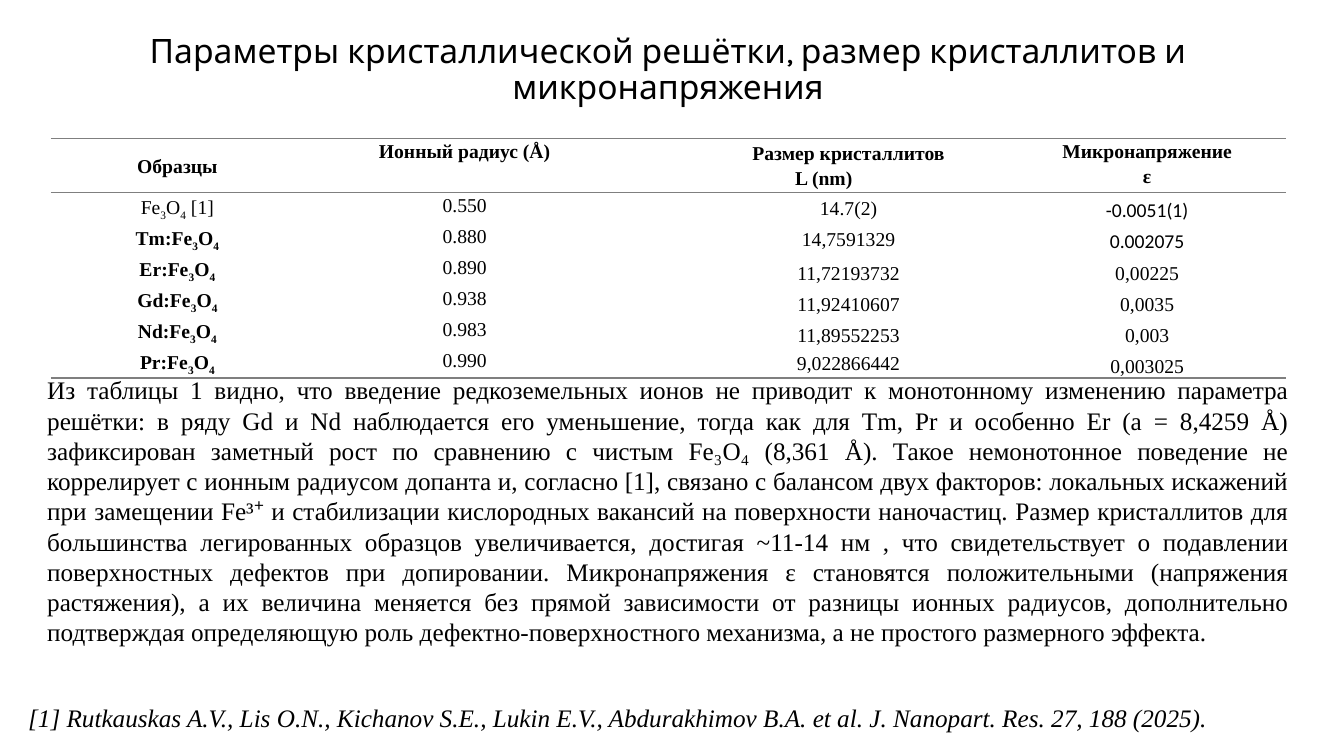
import pptx
import pptx.dml.color
import pptx.enum.text
import pptx.oxml
import pptx.oxml.ns
import pptx.util

Cm, Pt = pptx.util.Cm, pptx.util.Pt
ALIGN = pptx.enum.text.PP_ALIGN
ANCHOR = pptx.enum.text.MSO_ANCHOR
FIT = pptx.enum.text.MSO_AUTO_SIZE
TOP, MIDDLE, BOTTOM = ANCHOR.TOP, ANCHOR.MIDDLE, ANCHOR.BOTTOM

SERIF, SANS, HEADING = "Times New Roman", "Calibri", "Karla"
BLACK, RULE = "000000", "7F7F7F"

TITLE = "Параметры кристаллической решётки, размер кристаллитов и микронапряжения"
DISCUSSION = [
    "Из таблицы 1 видно, что введение редкоземельных ионов не приводит к монотонному "
    "изменению параметра решётки: в ряду Gd и Nd наблюдается его уменьшение, тогда как "
    "для Tm, Pr и особенно Er (а = 8,4259 Å) зафиксирован заметный рост по сравнению с "
    "чистым Fe₃O₄ (8,361 Å).",
    "Такое немонотонное поведение не коррелирует с ионным "
    "радиусом допанта и, согласно [1], связано с балансом двух факторов: локальных "
    "искажений при замещении Fe³⁺ и стабилизации кислородных вакансий на поверхности "
    "наночастиц.",
    "Размер кристаллитов для большинства легированных образцов "
    "увеличивается, достигая ~11-14 нм , что свидетельствует о подавлении поверхностных "
    "дефектов при допировании.",
    "Микронапряжения ε становятся положительными (напряжения "
    "растяжения), а их величина меняется без прямой зависимости от разницы ионных "
    "радиусов, дополнительно подтверждая определяющую роль дефектно‑поверхностного "
    "механизма, а не простого размерного эффекта.",
]
REFERENCE = (
    "[1] Rutkauskas A.V., Lis O.N., Kichanov S.E., Lukin E.V., Abdurakhimov B.A. et al. "
    "J. Nanopart. Res. 27, 188 (2025)."
)

HEADERS = ["Образцы", "Ионный радиус (Å)", "", "Размер кристаллитов L (nm)", "Микронапряжение\nε"]
HEADER_ANCHORS = [MIDDLE, TOP, TOP, MIDDLE, TOP]
# An underscore puts the next character in subscript.
SAMPLES = [
    ["Fe_3O_4 [1]", "0.550", "", "14.7(2)", "-0.0051(1)"],
    ["Tm:Fe_3O_4", "0.880", "", "14,7591329", "0.002075"],
    ["Er:Fe_3O_4", "0.890", "", "11,72193732", "0,00225"],
    ["Gd:Fe_3O_4", "0.938", "", "11,92410607", "0,0035"],
    ["Nd:Fe_3O_4", "0.983", "", "11,89552253", "0,003"],
    ["Pr:Fe_3O_4", "0.990", "", "9,022866442", "0,003025"],
]
SIZE_ANCHORS = [MIDDLE, MIDDLE, BOTTOM, BOTTOM, BOTTOM, MIDDLE]
STRAIN_FONTS = [SANS, SANS, SERIF, SERIF, SERIF, SERIF]
COLUMN_WIDTHS = [5.13, 9.35, 1.6, 6.8, 8.25]
HEADER_HEIGHT, SAMPLE_HEIGHT = 1.36, 0.78


def rgb(value):
    return pptx.dml.color.RGBColor.from_string(value)


def add_run(paragraph, text, size, face=SERIF, bold=False, italic=False, baseline=0):
    run = paragraph.add_run()
    run.text = text
    run.font.size, run.font.name = Pt(size), face
    run.font.bold, run.font.italic = bold, italic
    run.font.color.rgb = rgb(BLACK)
    if baseline:
        run._r.get_or_add_rPr().set("baseline", str(baseline * 1000))


def add_formula(paragraph, text, **style):
    """Add text whose characters after an underscore are subscripts."""
    first, *rest = text.split("_")
    add_run(paragraph, first, **style)
    for part in rest:
        add_run(paragraph, part[0], baseline=-25, **style)
        if part[1:]:
            add_run(paragraph, part[1:], **style)


def rule_cell(cell, top, bottom):
    """Draw the wanted horizontal rules of a cell and no other border."""
    properties = cell._tc.get_or_add_tcPr()
    for side, shown in (("L", False), ("R", False), ("T", top), ("B", bottom)):
        paint = f'<a:solidFill><a:srgbClr val="{RULE}"/></a:solidFill>' if shown else "<a:noFill/>"
        properties.append(pptx.oxml.parse_xml(
            f'<a:ln{side} w="12700" {pptx.oxml.ns.nsdecls("a")}>{paint}</a:ln{side}>'))
    cell.fill.background()


def fill_cell(cell, text, anchor, **style):
    cell.vertical_anchor = anchor
    cell.margin_left = cell.margin_right = Cm(0.18)
    cell.margin_top = cell.margin_bottom = 0
    if not text:
        return
    for number, line in enumerate(text.split("\n")):
        frame = cell.text_frame
        paragraph = frame.add_paragraph() if number else frame.paragraphs[0]
        paragraph.alignment = ALIGN.CENTER
        paragraph.line_spacing = 1.15
        paragraph._p.get_or_add_pPr().set("indent", str(Cm(1.25)))
        add_formula(paragraph, line, size=14, **style)


def add_title(slide, left, top, width, height):
    title = slide.shapes.title
    title.left, title.top, title.width, title.height = map(Cm, (left, top, width, height))
    frame = title.text_frame
    frame.word_wrap, frame.vertical_anchor = True, TOP
    frame.auto_size = FIT.SHAPE_TO_FIT_TEXT
    paragraph = frame.paragraphs[0]
    paragraph.alignment, paragraph.line_spacing = ALIGN.CENTER, 0.9
    add_run(paragraph, TITLE, 24, HEADING)


def add_samples_table(slide, left, top):
    row_count = len(SAMPLES) + 1
    height = HEADER_HEIGHT + SAMPLE_HEIGHT * len(SAMPLES)
    table = slide.shapes.add_table(
        row_count, len(HEADERS), Cm(left), Cm(top), Cm(sum(COLUMN_WIDTHS)), Cm(height)).table
    table.first_row = table.horz_banding = False
    for column, width in zip(table.columns, COLUMN_WIDTHS):
        column.width = Cm(width)
    for number, row in enumerate(table.rows):
        row.height = Cm(SAMPLE_HEIGHT if number else HEADER_HEIGHT)
        for cell in row.cells:
            rule_cell(cell, top=number < 2, bottom=number in (0, row_count - 1))

    for column, (text, anchor) in enumerate(zip(HEADERS, HEADER_ANCHORS)):
        fill_cell(table.cell(0, column), text, anchor, bold=True)
    for index, sample in enumerate(SAMPLES):
        anchors = [MIDDLE, TOP, TOP, SIZE_ANCHORS[index], BOTTOM]
        for column, (text, anchor) in enumerate(zip(sample, anchors)):
            fill_cell(table.cell(index + 1, column), text, anchor,
                      face=STRAIN_FONTS[index] if column == 4 else SERIF,
                      bold=column == 0 and index > 0)


def add_text(slide, left, top, width, height, text, align, spacing=None, italic=False):
    frame = slide.shapes.add_textbox(*map(Cm, (left, top, width, height))).text_frame
    frame.word_wrap = True
    paragraph = frame.paragraphs[0]
    paragraph.alignment, paragraph.line_spacing = align, spacing
    add_run(paragraph, text, 18, italic=italic)


def main():
    deck = pptx.Presentation()
    deck.slide_width, deck.slide_height = Cm(33.87), Cm(19.05)
    slide = deck.slides.add_slide(deck.slide_layouts[5])
    add_title(slide, -0.1, 0.74, 33.87, 1.27)
    add_text(slide, 0.94, 9.32, 31.8, 7.98, " ".join(DISCUSSION), ALIGN.JUSTIFY, spacing=Pt(21.6))
    add_samples_table(slide, 1.28, 3.48)
    add_text(slide, 0.46, 17.58, 33.3, 1.02, REFERENCE, ALIGN.LEFT, italic=True)
    deck.save("out.pptx")


if __name__ == "__main__":
    main()
